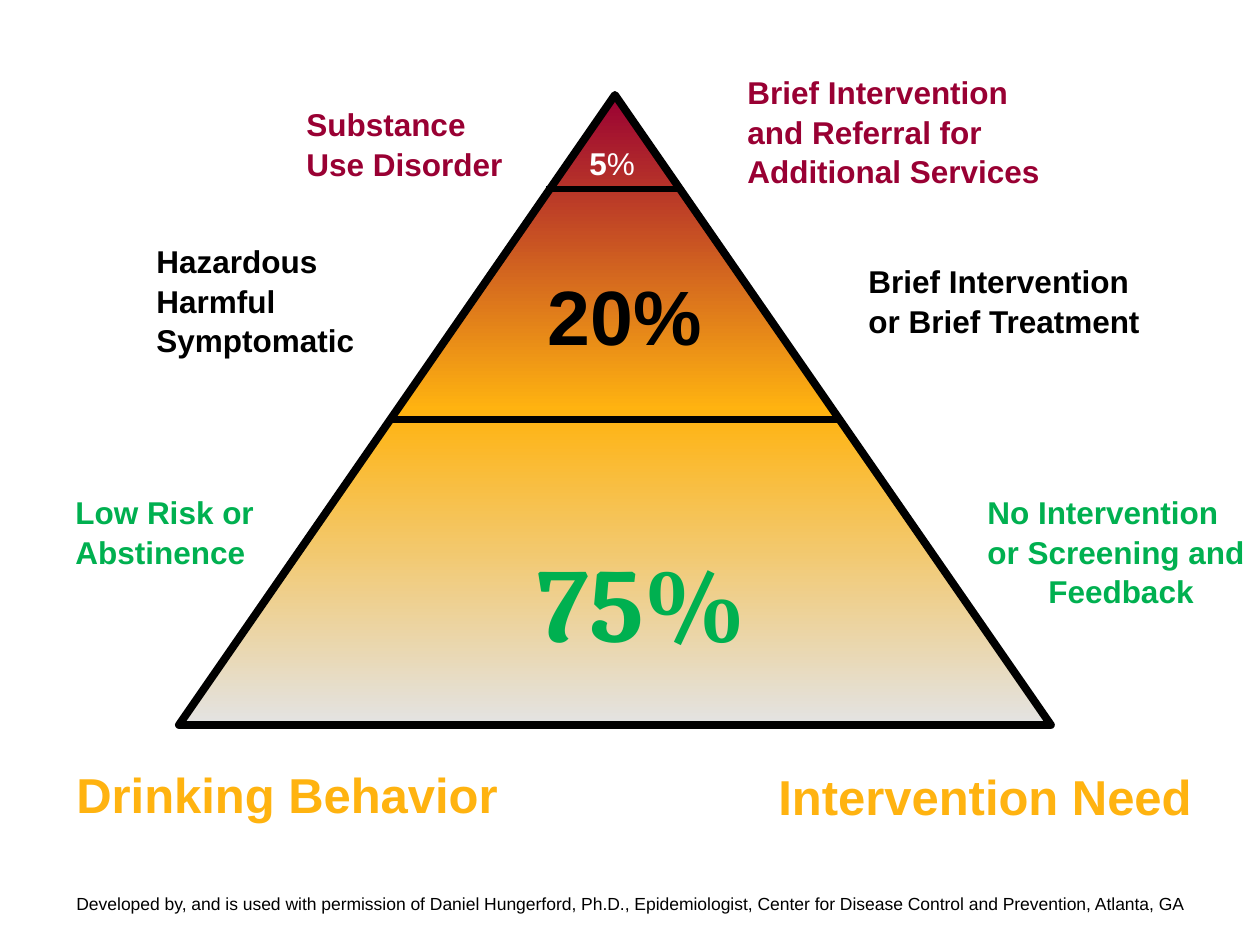
from copy import deepcopy
from dataclasses import dataclass

from lxml import etree
from pptx import Presentation
from pptx.dml.color import RGBColor
from pptx.enum.shapes import MSO_CONNECTOR, MSO_SHAPE
from pptx.enum.text import MSO_ANCHOR, PP_ALIGN
from pptx.oxml.ns import qn
from pptx.util import Emu, Pt

PX = 914400 // 126
STRAIGHT = MSO_CONNECTOR.STRAIGHT
TRIANGLE = MSO_SHAPE.FLOWCHART_EXTRACT
LEFT, CENTER = PP_ALIGN.LEFT, PP_ALIGN.CENTER
TOP, MIDDLE = MSO_ANCHOR.TOP, MSO_ANCHOR.MIDDLE


@dataclass(frozen=True)
class Theme:
    font: str = "Arial"
    accent_font: str = "Cambria"
    crimson: str = "990033"
    amber: str = "FFB310"
    gray: str = "E3E3E3"
    green: str = "00B050"
    black: str = "000000"
    white: str = "FFFFFF"
    credit: int = 10
    label: int = 18
    heading: int = 28
    middle_share: int = 44
    base_share: int = 60
    line_spacing: float = 1.05


THEME = Theme()


def px(value):
    return Emu(value * PX)


def rgb(color):
    return RGBColor.from_string(color)


def add_text(slide, box, paragraphs, size, color, bold=True,
             font=THEME.font, align=LEFT, anchor=TOP):
    """Each paragraph is (left indent in px, [(text, bold or None), ...])."""
    shape = slide.shapes.add_textbox(*map(px, box))
    frame = shape.text_frame
    frame.word_wrap = True
    frame.vertical_anchor = anchor
    for index, (indent, runs) in enumerate(paragraphs):
        paragraph = frame.paragraphs[0] if index == 0 else frame.add_paragraph()
        paragraph.alignment = align
        paragraph.line_spacing = THEME.line_spacing
        if indent:
            paragraph._p.get_or_add_pPr().set("marL", str(px(indent)))
        for text, run_bold in runs:
            run = paragraph.add_run()
            run.text = text
            run.font.name = font
            run.font.size = Pt(size)
            run.font.bold = bold if run_bold is None else run_bold
            run.font.color.rgb = rgb(color)


def plain(*lines):
    return [(0, [(line, None)]) for line in lines]


def add_pyramid(slide, box, colors):
    shape = slide.shapes.add_shape(TRIANGLE, *map(px, box))
    shape.shadow.inherit = False
    shape.fill.gradient()
    shape.fill.gradient_angle = 270
    # The default gradient has two stops; add the third
    stop_list = shape._element.spPr.find(qn("a:gradFill")).find(qn("a:gsLst"))
    stop_list.append(deepcopy(stop_list[0]))
    for index, (stop, color) in enumerate(zip(shape.fill.gradient_stops, colors)):
        stop.position = index / (len(colors) - 1)
        stop.color.rgb = rgb(color)
    shape.line.color.rgb = rgb(THEME.black)
    shape.line.width = Pt(4.5)
    etree.SubElement(shape.line._get_or_add_ln(), qn("a:round"))


def add_divider(slide, left, right, y, width):
    line = slide.shapes.add_connector(STRAIGHT, px(left), px(y), px(right), px(y))
    line.line.color.rgb = rgb(THEME.black)
    line.line.width = Pt(width)
    etree.SubElement(line._element.spPr, qn("a:effectLst"))


def main():
    presentation = Presentation()
    presentation.slide_width, presentation.slide_height = px(1260), px(945)
    slide = presentation.slides.add_slide(presentation.slide_layouts[6])

    # Pyramid and its level dividers
    add_pyramid(slide, (179, 95, 872, 630),
                (THEME.crimson, THEME.amber, THEME.gray))
    add_divider(slide, 546, 683, 189, 3)
    add_divider(slide, 388, 840, 420, 4)

    # Share of each level
    add_text(slide, (528, 136, 168, 49), [(0, [("5", True), ("%", False)])],
             THEME.label, THEME.white, align=CENTER)
    add_text(slide, (535, 258, 210, 101), plain("20%"),
             THEME.middle_share, THEME.black)
    add_text(slide, (525, 525, 368, 140), plain("75%"),
             THEME.base_share, THEME.green, font=THEME.accent_font)

    # Behavior labels on the left, intervention labels on the right
    labels = [
        ((294, 97, 231, 89), plain("Substance Use Disorder"), THEME.crimson),
        ((144, 234, 283, 127), plain("Hazardous Harmful Symptomatic"), THEME.black),
        ((63, 485, 210, 127), plain("Low Risk or", "Abstinence"), THEME.green),
        ((735, 65, 350, 127),
         plain("Brief Intervention and Referral for Additional Services"),
         THEME.crimson),
        ((856, 254, 302, 89),
         plain("Brief Intervention or Brief Treatment"), THEME.black),
        ((975, 485, 284, 127),
         plain("No Intervention or Screening and") + [(61, [("Feedback", None)])],
         THEME.green),
    ]
    for box, paragraphs, color in labels:
        add_text(slide, box, paragraphs, THEME.label, color)

    # Column headings
    add_text(slide, (48, 755, 478, 72), plain("Drinking Behavior"),
             THEME.heading, THEME.amber, align=CENTER)
    add_text(slide, (766, 757, 462, 72), plain("Intervention Need"),
             THEME.heading, THEME.amber)

    # Credit line
    add_text(slide, (0, 886, 1260, 34),
             plain("Developed by, and is used with permission of Daniel Hungerford, "
                   "Ph.D., Epidemiologist, Center for Disease Control and "
                   "Prevention, Atlanta, GA"),
             THEME.credit, THEME.black, bold=False, align=CENTER, anchor=MIDDLE)

    presentation.save("out.pptx")


if __name__ == "__main__":
    main()
